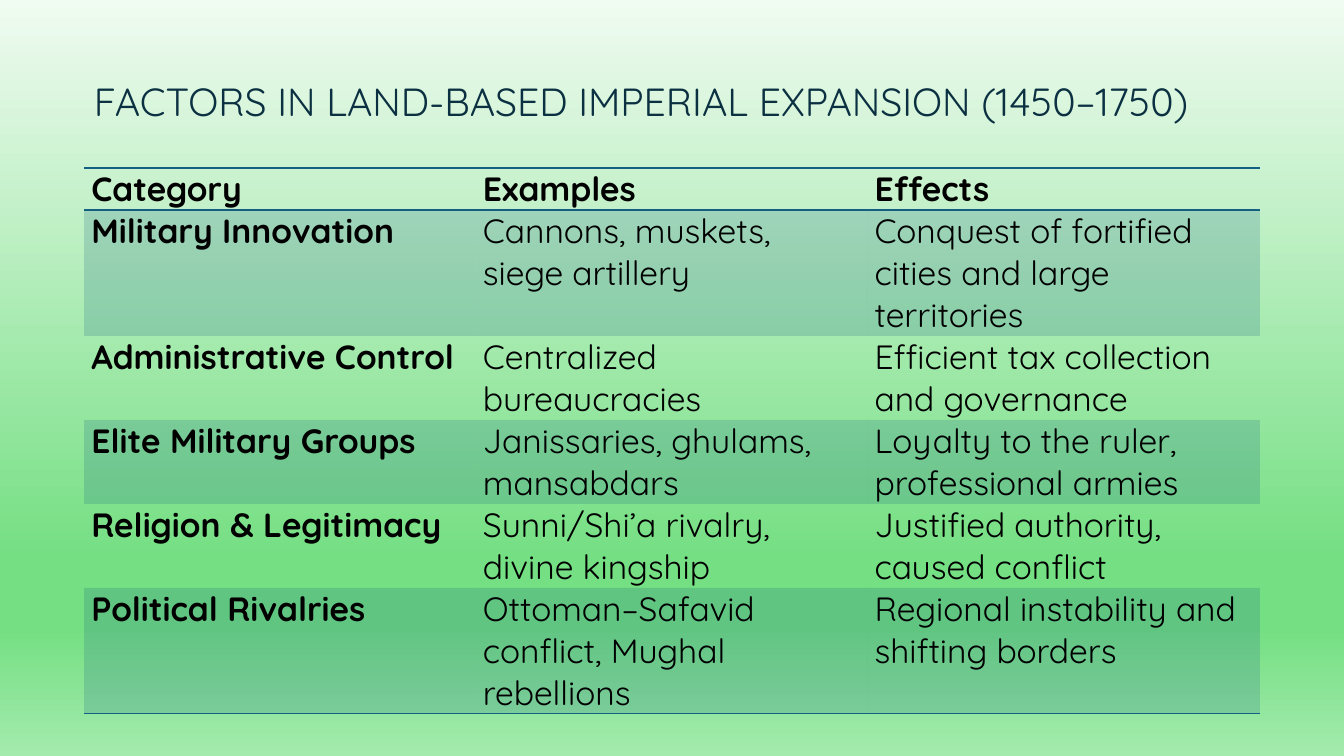
from dataclasses import dataclass

from lxml.etree import SubElement
from pptx import Presentation
from pptx.dml.color import RGBColor
from pptx.enum.shapes import MSO_SHAPE
from pptx.enum.text import MSO_ANCHOR
from pptx.oxml import parse_xml
from pptx.oxml.ns import nsdecls, qn
from pptx.util import Emu, Pt

EMU_PER_PX = 9525


@dataclass(frozen=True)
class Theme:
    font: str = "Quicksand"
    heading: str = "0B3041"
    body: str = "000000"
    accent: str = "156082"
    gradient: tuple = ((0, "F0FBF1"), (74, "75DF83"), (83, "75DF83"), (100, "A3EAAD"))
    band_opacity: int = 20
    heading_size: int = 28
    body_size: int = 24
    rule_width: int = 1


THEME = Theme()
SLIDE_SIZE = (1280, 720)
TITLE_BOX = (80, 60, 1120, 64)
TABLE_LEFT, TABLE_TOP = 80, 160
COLUMN_WIDTHS = (373, 373, 374)
LINE_HEIGHT = 40
CELL_INSET = 7
PLAIN_TABLE_STYLE = "{2D5ABB26-0587-4C30-8999-92F81FD0307C}"

TITLE = "FACTORS IN LAND-BASED IMPERIAL EXPANSION (1450–1750)"
FACTORS = (
    (1, "Category", "Examples", "Effects"),
    (3, "Military Innovation", "Cannons, muskets, siege artillery",
     "Conquest of fortified cities and large territories"),
    (2, "Administrative Control", "Centralized bureaucracies",
     "Efficient tax collection and governance"),
    (2, "Elite Military Groups", "Janissaries, ghulams, mansabdars",
     "Loyalty to the ruler, professional armies"),
    (2, "Religion & Legitimacy", "Sunni/Shi’a rivalry, divine kingship",
     "Justified authority, caused conflict"),
    (3, "Political Rivalries", "Ottoman–Safavid conflict, Mughal rebellions",
     "Regional instability and shifting borders"),
)


def px(*lengths):
    return [Emu(length * EMU_PER_PX) for length in lengths]


def write(frame, text, *, size=THEME.body_size, color=THEME.body, bold=False,
          line_spacing=None):
    paragraph = frame.paragraphs[0]
    paragraph.line_spacing = line_spacing
    run = paragraph.add_run()
    run.text = text
    run.font.name = THEME.font
    run.font.size = Pt(size)
    run.font.bold = bold
    run.font.color.rgb = RGBColor.from_string(color)


def add_backdrop(slide):
    backdrop = slide.shapes.add_shape(MSO_SHAPE.RECTANGLE, *px(0, 0, *SLIDE_SIZE))
    backdrop.shadow.inherit = False
    backdrop.line.fill.background()
    stops = "".join(
        f'<a:gs pos="{position * 1000}"><a:srgbClr val="{color}"/></a:gs>'
        for position, color in THEME.gradient
    )
    gradient = parse_xml(
        f'<a:gradFill {nsdecls("a")} rotWithShape="1"><a:gsLst>{stops}</a:gsLst>'
        '<a:lin ang="5400000" scaled="0"/></a:gradFill>'
    )
    backdrop.element.spPr.find(qn("a:prstGeom")).addnext(gradient)


def add_title(slide):
    title = slide.shapes.add_textbox(*px(*TITLE_BOX)).text_frame
    title.word_wrap = True
    title.vertical_anchor = MSO_ANCHOR.BOTTOM
    write(title, TITLE, size=THEME.heading_size, color=THEME.heading, line_spacing=0.9)


def shade(cell):
    cell.fill.solid()
    cell.fill.fore_color.rgb = RGBColor.from_string(THEME.accent)
    tint = cell.fill._xPr.find(qn("a:solidFill")).find(qn("a:srgbClr"))
    SubElement(tint, qn("a:alpha"), val=str(THEME.band_opacity * 1000))


def rule(cell, *sides):
    properties = cell._tc.get_or_add_tcPr()
    for order, side in enumerate(sides):
        properties.insert(order, parse_xml(
            f'<a:ln{side} {nsdecls("a")} w="{Pt(THEME.rule_width)}"><a:solidFill>'
            f'<a:srgbClr val="{THEME.accent}"/></a:solidFill></a:ln{side}>'
        ))


def fill_cell(cell, text, *, bold, banded, ruled_sides):
    cell.margin_left, cell.margin_right, cell.margin_top, cell.margin_bottom = px(
        CELL_INSET, CELL_INSET, 0, 0
    )
    write(cell.text_frame, text, bold=bold)
    if banded:
        shade(cell)
    else:
        cell.fill.background()
    rule(cell, *ruled_sides)


def add_factor_table(slide):
    height = LINE_HEIGHT * sum(lines for lines, *_ in FACTORS)
    frame = slide.shapes.add_table(
        len(FACTORS), len(COLUMN_WIDTHS),
        *px(TABLE_LEFT, TABLE_TOP, sum(COLUMN_WIDTHS), height),
    )
    table = frame.table
    table.horz_banding = False
    table._tbl.tblPr.find(qn("a:tableStyleId")).text = PLAIN_TABLE_STYLE
    for column, width in zip(table.columns, px(*COLUMN_WIDTHS)):
        column.width = width
    ruled = {0: ("T", "B"), len(FACTORS) - 1: ("B",)}
    for row_number, (lines, *texts) in enumerate(FACTORS):
        row = table.rows[row_number]
        row.height, = px(lines * LINE_HEIGHT)
        for column_number, text in enumerate(texts):
            fill_cell(
                row.cells[column_number], text,
                bold=row_number == 0 or column_number == 0,
                banded=row_number % 2 == 1,
                ruled_sides=ruled.get(row_number, ()),
            )


def main():
    presentation = Presentation()
    presentation.slide_width, presentation.slide_height = px(*SLIDE_SIZE)
    slide = presentation.slides.add_slide(presentation.slide_layouts[6])
    add_backdrop(slide)
    add_title(slide)
    add_factor_table(slide)
    presentation.save("out.pptx")


if __name__ == "__main__":
    main()
